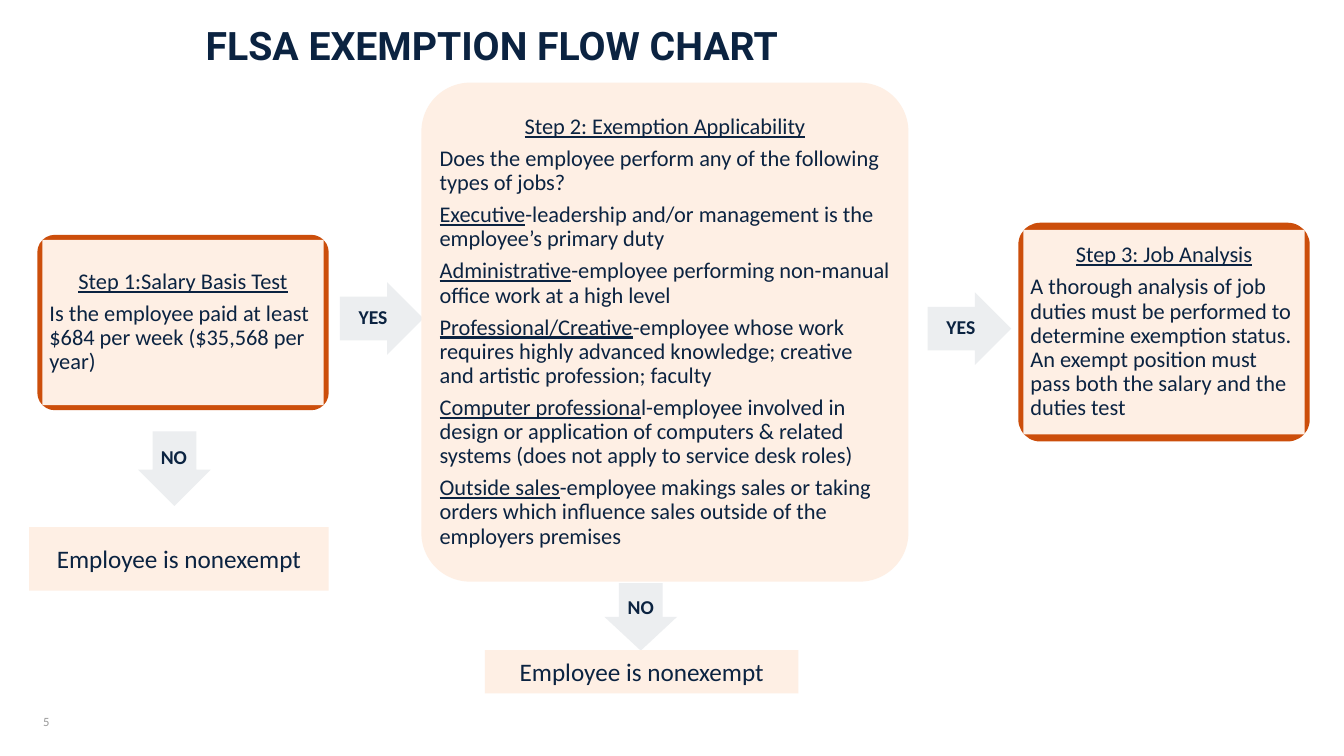
from pptx import Presentation
from pptx.dml.color import RGBColor
from pptx.enum.shapes import MSO_SHAPE as SHAPE
from pptx.enum.text import MSO_ANCHOR as ANCHOR, MSO_AUTO_SIZE as AUTO, PP_ALIGN as ALIGN
from pptx.util import Pt

PX = 9144  # 100 px to the inch
NAVY, ORANGE, PEACH, GRAY = "0B2341", "CC4E0B", "FEEFE4", "ECEEF0"


def px(*lengths):
    return [n * PX for n in lengths]


def color(hex_value):
    return RGBColor.from_string(hex_value)


def write(tf, paragraphs, size=16, font="Calibri", fill=NAVY, bold=False,
          align=ALIGN.LEFT, first_align=None, anchor=ANCHOR.MIDDLE,
          inset=None, line=None, after=0):
    """Each paragraph is a pair: underlined text, then plain text."""
    tf.word_wrap = True
    tf.auto_size = AUTO.NONE
    tf.vertical_anchor = anchor
    if inset is not None:
        tf.margin_left = tf.margin_top = tf.margin_right = tf.margin_bottom = inset * PX
    for i, (underlined, plain) in enumerate(paragraphs):
        p = tf.paragraphs[0] if i == 0 else tf.add_paragraph()
        p.alignment = first_align if i == 0 and first_align is not None else align
        p.space_before, p.space_after = Pt(0), Pt(after)
        if line:
            p.line_spacing = line
        for text, underline in ((underlined, True), (plain, False)):
            if text:
                r = p.add_run()
                r.text = text
                r.font.name, r.font.size = font, Pt(size)
                r.font.bold, r.font.underline = bold, underline
                r.font.color.rgb = color(fill)


def add_block(s, kind, box, fill):
    sp = s.shapes.add_shape(kind, *px(*box))
    sp.shadow.inherit = False
    sp.fill.solid()
    sp.fill.fore_color.rgb = color(fill)
    sp.line.fill.background()
    return sp


def add_label(s, box, text, **fmt):
    tf = s.shapes.add_textbox(*px(*box)).text_frame
    write(tf, [("", text)], **fmt)


def add_step(s, box, paragraphs, pad_x, pad_y, framed=True):
    x, y, w, h = box
    outer = add_block(s, SHAPE.ROUNDED_RECTANGLE, box, ORANGE if framed else PEACH)
    outer.adjustments[0] = 0.1
    inner = (x + pad_x, y + pad_y, w - 2 * pad_x, h - 2 * pad_y)
    if framed:
        panel = add_block(s, SHAPE.RECTANGLE, inner, PEACH)
    else:
        panel = s.shapes.add_textbox(*px(*inner))
    write(panel.text_frame, paragraphs, first_align=ALIGN.CENTER,
          inset=7, line=0.9, after=5.6)


def add_answer(s, box, text, label_box, down=False):
    x, y, w, h = box
    arrow = add_block(s, SHAPE.RIGHT_ARROW, box, GRAY)
    arrow.adjustments[0], arrow.adjustments[1] = 0.6, 0.5
    arrow.rotation = 90 if down else 0
    dx, dy, label_w, label_h = label_box
    add_label(s, (x + dx, y + dy, label_w, label_h), text, size=14, bold=True,
              align=ALIGN.CENTER, inset=0, line=0.9, after=4.9)


def add_outcome(s, box):
    sp = add_block(s, SHAPE.RECTANGLE, box, PEACH)
    write(sp.text_frame, [("", "Employee is nonexempt")], size=18, align=ALIGN.CENTER)


def add_title(s, box, text):
    title = s.shapes.title
    title.left, title.top, title.width, title.height = px(*box)
    write(title.text_frame, [("", text)], size=28, font="Roboto", bold=True,
          anchor=ANCHOR.TOP, line=0.8)


def main():
    prs = Presentation()
    prs.slide_width, prs.slide_height = px(1333, 750)
    s = prs.slides.add_slide(prs.slide_layouts[5])

    # Title and page number
    add_title(s, (194, 25, 1093, 73), "FLSA EXEMPTION FLOW CHART")
    add_label(s, (33, 696, 35, 40), "5", size=9, fill="999999")

    # Step 1
    add_step(s, (37, 233, 289, 174), [
        ("Step 1:Salary Basis Test", ""),
        ("", "Is the employee paid at least $684 per week ($35,568 per year)"),
    ], 5, 5)
    add_answer(s, (136, 429, 74, 72), "NO", (15, -2, 43, 56), down=True)
    add_outcome(s, (29, 523, 297, 63))
    add_answer(s, (337, 280, 83, 72), "YES", (2, 14, 62, 43))

    # Step 2
    add_step(s, (418, 82, 483, 495), [
        ("Step 2: Exemption Applicability", ""),
        ("", "Does the employee perform any of the following types of jobs?"),
        ("Executive", "-leadership and/or management is the employee’s primary duty"),
        ("Administrative", "-employee performing non-manual office work at a high level"),
        ("Professional/Creative", "-employee whose work requires highly advanced knowledge; "
         "creative and artistic profession; faculty"),
        ("Computer professiona", "l-employee involved in design or application of computers "
         "& related systems (does not apply to service desk roles)"),
        ("Outside sales", "-employee makings sales or taking orders which influence sales "
         "outside of the employers premises"),
    ], 11, 14, framed=False)
    add_answer(s, (602, 576, 67, 72), "NO", (12, 2, 43, 50), down=True)
    add_outcome(s, (481, 645, 311, 43))
    add_answer(s, (920, 290, 83, 72), "YES", (2, 14, 62, 43))

    # Step 3
    add_step(s, (1010, 221, 289, 217), [
        ("Step 3: Job Analysis", ""),
        ("", "A thorough analysis of job duties must be performed to determine exemption "
         "status. An exempt position must pass both the salary and the duties test"),
    ], 5, 7)

    prs.save("out.pptx")


if __name__ == "__main__":
    main()
